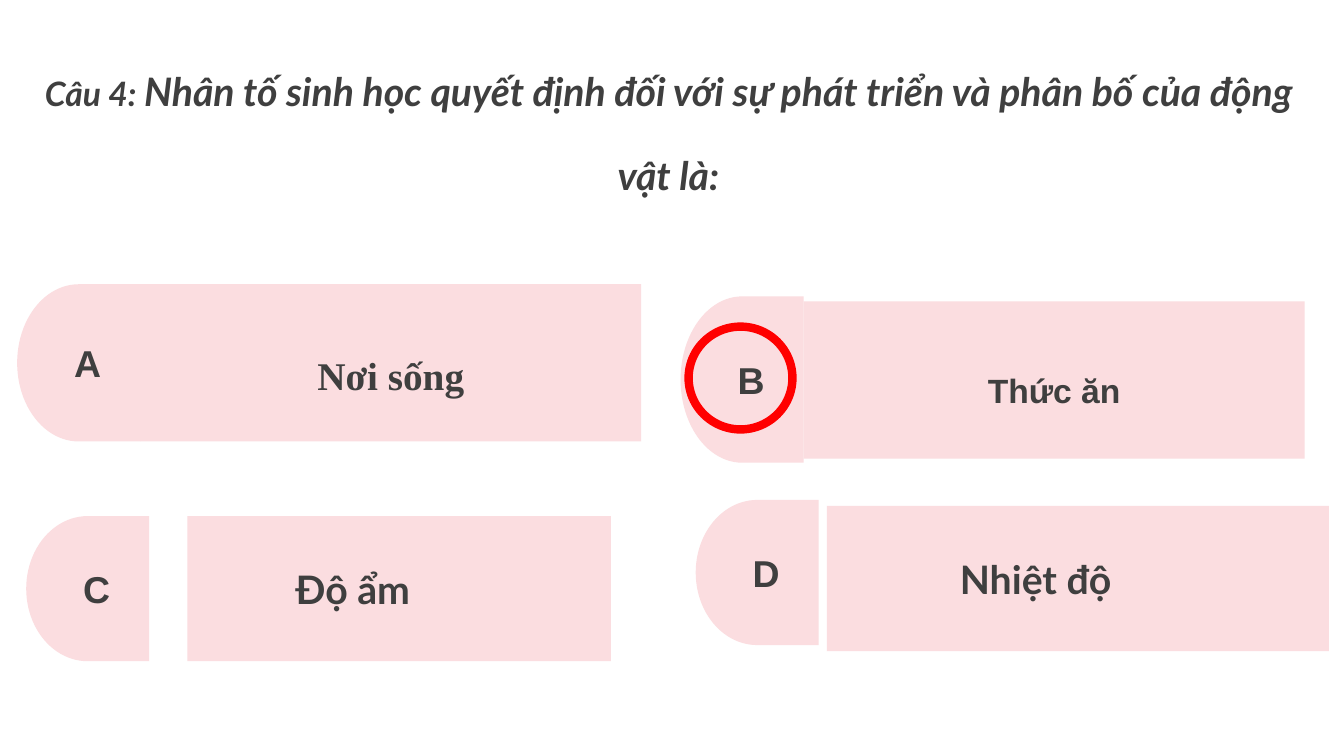
import pptx
import pptx.util
import pptx.dml.color
import pptx.enum.shapes
import pptx.enum.text

Inches, Pt = pptx.util.Inches, pptx.util.Pt
SHAPES = pptx.enum.shapes.MSO_SHAPE
ALIGN = pptx.enum.text.PP_ALIGN
ANCHOR = pptx.enum.text.MSO_ANCHOR

# Content
COLORS = {"text": "3F3F3F", "panel": "FBDDE0", "ring": "FF0000"}
QUESTION = [
    ("Câu 4: ", 24),
    ("Nhân tố sinh học quyết định đối với sự phát triển và phân bố của động vật là:", 28),
]
TAB_WIDTH = 1.22
# Boxes are left, top, width, height; an indent makes the answer left-aligned
ANSWERS = [
    {"letter": "A", "tab": (0.17, 2.82, TAB_WIDTH, 1.56), "answer": "Nơi sống",
     "panel": (1.39, 2.82, 4.97, 1.56), "font": "Times New Roman", "size": 28, "indent": None},
    {"letter": "B", "tab": (6.75, 2.94, TAB_WIDTH, 1.65), "answer": "Thức ăn",
     "panel": (7.97, 2.99, 4.97, 1.56), "font": "Arial", "size": 24, "indent": None},
    {"letter": "C", "tab": (0.26, 5.12, TAB_WIDTH, 1.44), "answer": "Độ ẩm",
     "panel": (1.86, 5.12, 4.2, 1.44), "font": "Lato", "size": 28, "indent": 1.07},
    {"letter": "D", "tab": (6.9, 4.96, TAB_WIDTH, 1.44), "answer": "Nhiệt độ",
     "panel": (8.2, 5.02, 4.98, 1.44), "font": "Lato", "size": 28, "indent": 1.32},
]
RING_BOX = (6.83, 3.24, 1.03, 1.02)


def rgb(name):
    return pptx.dml.color.RGBColor.from_string(COLORS[name])


def style(run, font, size, italic=False):
    run.font.name, run.font.size = font, Pt(size)
    run.font.bold, run.font.italic = True, italic
    run.font.color.rgb = rgb("text")


def add_block(slide, kind, box, text, font, size):
    block = slide.shapes.add_shape(kind, *map(Inches, box))
    block.shadow.inherit = False
    block.fill.solid()
    block.fill.fore_color.rgb = rgb("panel")
    block.line.fill.background()
    block.text_frame.text = text
    block.text_frame.vertical_anchor = ANCHOR.MIDDLE
    paragraph = block.text_frame.paragraphs[0]
    paragraph.alignment = ALIGN.CENTER
    style(paragraph.runs[0], font, size)
    return block


def add_question(slide):
    title = slide.shapes.title
    title.left, title.top, title.width, title.height = map(Inches, (0.43, 0.31, 12.4, 1.57))
    frame = title.text_frame
    frame.margin_left = frame.margin_top = frame.margin_right = frame.margin_bottom = 0
    frame.word_wrap = True
    frame.auto_size = pptx.enum.text.MSO_AUTO_SIZE.NONE
    frame.vertical_anchor = ANCHOR.TOP
    paragraph = frame.paragraphs[0]
    paragraph.alignment = ALIGN.CENTER
    paragraph.line_spacing = Pt(59.7)
    for text, size in QUESTION:
        run = paragraph.add_run()
        run.text = text
        style(run, "Lato", size, italic=True)


def add_answer(slide, item):
    # Letter tab, rounded side to the left
    tab = add_block(slide, SHAPES.FLOWCHART_DELAY, item["tab"], item["letter"], "Arial", 26.7)
    tab._element.spPr.xfrm.set("flipH", "1")
    # Answer panel
    panel = add_block(slide, SHAPES.RECTANGLE, item["panel"], item["answer"],
                      item["font"], item["size"])
    paragraph = panel.text_frame.paragraphs[0]
    if item["indent"] is None:
        paragraph.line_spacing = 1.5
    else:
        paragraph.alignment = ALIGN.LEFT
        panel.text_frame.margin_left = Inches(item["indent"])


def main():
    deck = pptx.Presentation()
    deck.slide_width, deck.slide_height = Inches(13.33), Inches(7.5)
    slide = deck.slides.add_slide(deck.slide_layouts[5])  # Title Only

    add_question(slide)
    for item in ANSWERS:
        add_answer(slide, item)

    # Ring around the correct letter
    ring = slide.shapes.add_shape(SHAPES.OVAL, *map(Inches, RING_BOX))
    ring.shadow.inherit = False
    ring.fill.background()
    ring.line.color.rgb = rgb("ring")
    ring.line.width = Pt(6)

    deck.save("out.pptx")


if __name__ == "__main__":
    main()
